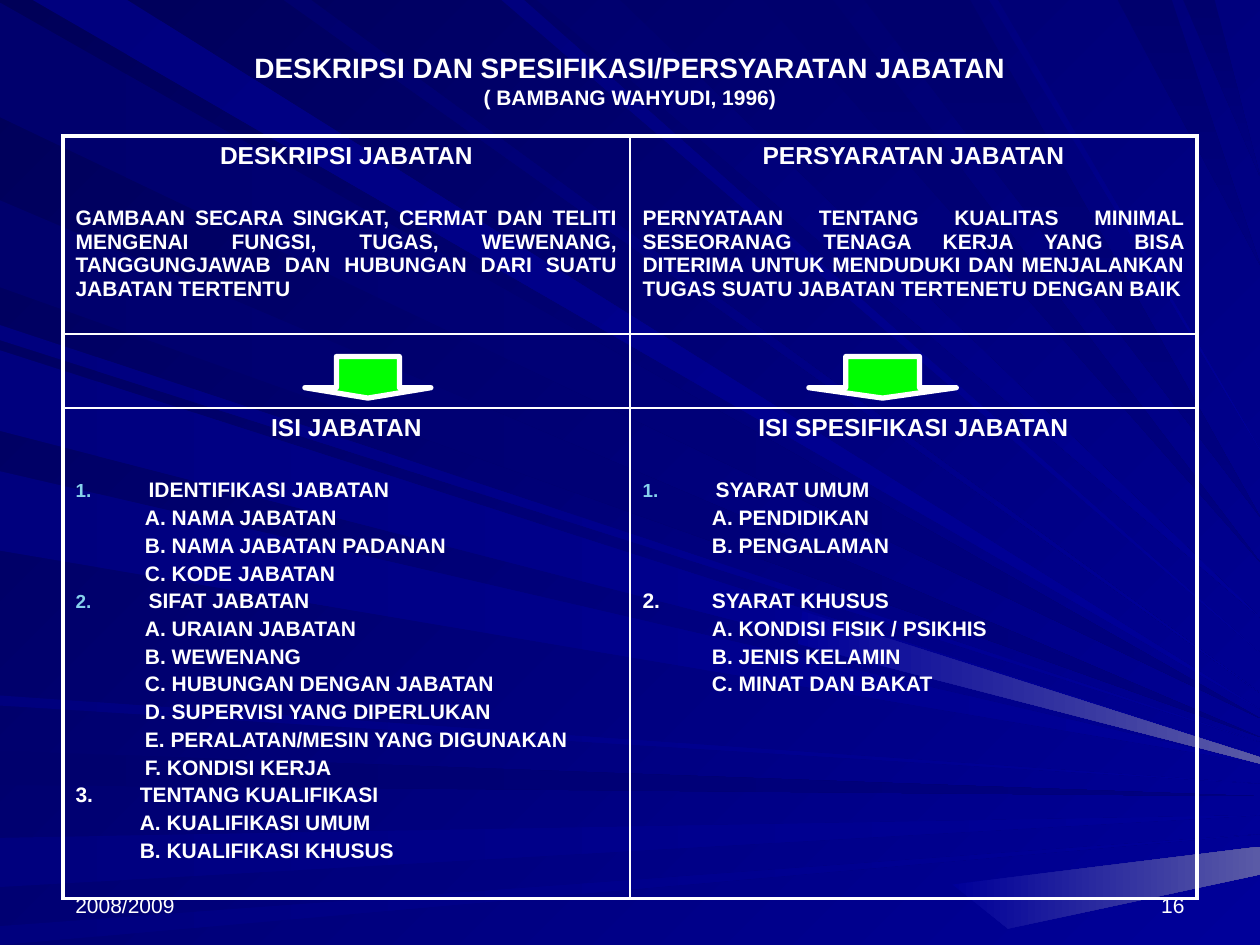
from lxml.etree import SubElement
from pptx import Presentation
from pptx.dml.color import RGBColor
from pptx.enum.shapes import MSO_SHAPE
from pptx.enum.text import MSO_ANCHOR, PP_ALIGN
from pptx.oxml import parse_xml
from pptx.oxml.ns import nsdecls, qn
from pptx.util import Inches, Pt

THEME = {
    "font": "Arial", "text": "FFFFFF", "number": "86D1EC", "arrow": "00FF00",
    "night": "000058", "deep": "00006D", "dusk": "00007E", "navy": "000080",
    "blue": "000099", "pale": "5A5AA6",
    "title": 16, "heading": 14, "body": 12,
    "outer_line": 2.25, "inner_line": 1, "arrow_line": 3,
    "space": 2.4, "heading_gap": 21, "item_gap": 18.2,
}

TITLE = "DESKRIPSI DAN SPESIFIKASI/PERSYARATAN JABATAN"
SOURCE = "( BAMBANG WAHYUDI, 1996)"
YEAR, PAGE = "2008/2009", "16"

DEFINITIONS = [
    ("DESKRIPSI JABATAN",
     "GAMBAAN SECARA SINGKAT, CERMAT DAN TELITI MENGENAI FUNGSI, TUGAS, WEWENANG, "
     "TANGGUNGJAWAB DAN HUBUNGAN DARI SUATU JABATAN TERTENTU"),
    ("PERSYARATAN JABATAN",
     "PERNYATAAN TENTANG KUALITAS MINIMAL SESEORANAG TENAGA KERJA YANG BISA DITERIMA "
     "UNTUK MENDUDUKI DAN MENJALANKAN TUGAS SUATU JABATAN TERTENETU DENGAN BAIK"),
]

CONTENTS = [
    ("ISI JABATAN", [
        (1, True, "IDENTIFIKASI JABATAN", 0.55, "heading_gap",
         ["A. NAMA JABATAN", "B. NAMA JABATAN PADANAN", "C. KODE JABATAN"]),
        (2, True, "SIFAT JABATAN", 0.55, "space",
         ["A. URAIAN JABATAN", "B. WEWENANG", "C. HUBUNGAN DENGAN JABATAN",
          "D. SUPERVISI YANG DIPERLUKAN", "E. PERALATAN/MESIN YANG DIGUNAKAN",
          "F. KONDISI KERJA"]),
        (3, False, "TENTANG KUALIFIKASI", 0.51, "space",
         ["A. KUALIFIKASI UMUM", "B. KUALIFIKASI KHUSUS"]),
    ]),
    ("ISI SPESIFIKASI JABATAN", [
        (1, True, "SYARAT UMUM", 0.55, "heading_gap",
         ["A. PENDIDIKAN", "B. PENGALAMAN"]),
        (2, False, "SYARAT KHUSUS", 0.55, "item_gap",
         ["A. KONDISI FISIK / PSIKHIS", "B. JENIS KELAMIN", "C. MINAT DAN BAKAT"]),
    ]),
]

ARROWS = [(2.42, 1), (6.42, 1.17)]
COLUMNS, ROWS = (4.5, 4.5), (1.57, 0.59, 3.89)

RAYS = [
    ("left", "deep", "navy", 0.02, 0.93, 5.7),
    ("top", "dusk", "blue", 0.26, 1.01, 5.63),
    ("left", "deep", "navy", 5.96, 6.23, 6.32),
    ("left", "dusk", "blue", 6.65, 7.04, 6.47),
    ("left", "dusk", "blue", 7.35, 7.5, 6.62),
    ("left", "dusk", "blue", 2.58, 2.7, 5.89),
    ("left", "deep", "navy", 1.59, 2.28, 5.85),
    ("top", "dusk", "blue", 3.98, 4.16, 5.18),
    ("top", "deep", "blue", 4.26, 4.92, 4.9),
    ("top", "deep", "navy", 6.06, 6.61, 4.46),
    ("top", "deep", "navy", 8.87, 9.3, 2.1),
    ("top", "deep", "navy", 9.39, 9.64, 1.4),
    ("left", "dusk", "blue", 2.78, 3.42, 6),
    ("left", "dusk", "blue", 3.74, 4.37, 6.06),
    ("left", "dusk", "blue", 5.52, 5.6, 6.22),
    ("top", "deep", "blue", 2.25, 2.47, 5.5),
    ("top", "deep", "navy", 6.86, 7.7, 4.1),
    ("top", "dusk", "blue", 7.85, 7.92, 3.57),
]
GLOWS = [
    [(7.56, 7.02), (10, 6.72), (10, 6.94), (8, 7.37)],
    [(6.37, 4.85), (10, 6.01), (10, 6.06), (6.33, 5.11)],
]


def color(name):
    return RGBColor.from_string(THEME[name])


def paint(fill, start, end, angle):
    fill.gradient()
    fill.gradient_angle = (360 - angle) % 360
    for stop, shade in zip(fill.gradient_stops, (start, end)):
        stop.color.rgb = color(shade)


def add_ray(slide, corners, start, end, angle):
    first, *rest = [(Inches(x), Inches(y)) for x, y in corners]
    builder = slide.shapes.build_freeform(*first, scale=1.0)
    builder.add_line_segments(rest, close=True)
    ray = builder.convert_to_shape()
    ray.shadow.inherit = False
    ray.line.fill.background()
    paint(ray.fill, start, end, angle)


def add_backdrop(slide):
    paint(slide.background.fill, "night", "blue", 45)
    for edge, start, end, near, far, tip in RAYS:
        if edge == "left":
            base, angle = [(0, near), (0, far)], 0
        else:
            base, angle = [(near, 0), (far, 0)], 90 if end == "navy" else 45
        add_ray(slide, base + [(10, tip)], start, end, angle)
    for corners in GLOWS:
        add_ray(slide, corners, "blue", "pale", 0)


def style(paragraph, size, align, bold=True, before=0):
    font = paragraph.font
    font.name, font.size, font.bold = THEME["font"], Pt(THEME[size]), bold
    font.color.rgb = color("text")
    paragraph.alignment, paragraph.space_before = align, Pt(before)


def add_label(slide, box, text, align, anchor, size="body", bold=False):
    frame = slide.shapes.add_textbox(*map(Inches, box)).text_frame
    frame.word_wrap, frame.vertical_anchor = True, anchor
    paragraph = frame.paragraphs[0]
    paragraph.add_run().text = text
    style(paragraph, size, align, bold)
    return paragraph


def write_heading(cell, text):
    paragraph = cell.text_frame.paragraphs[0]
    paragraph.text = text
    style(paragraph, "heading", PP_ALIGN.CENTER, before=2.8)


def write_line(cell, text, gap="space", left=0, hanging=0):
    paragraph = cell.text_frame.add_paragraph()
    paragraph.text = text
    style(paragraph, "body", PP_ALIGN.JUSTIFY, before=THEME[gap])
    properties = paragraph._p.get_or_add_pPr()
    properties.set("marL", str(Inches(left)))
    properties.set("indent", str(-Inches(hanging)))
    return properties


def add_number(properties, number):
    tint = f'<a:buClr {nsdecls("a")}><a:srgbClr val="{THEME["number"]}"/></a:buClr>'
    size = f'<a:buSzPct {nsdecls("a")} val="90000"/>'
    count = f'<a:buAutoNum {nsdecls("a")} type="arabicPeriod" startAt="{number}"/>'
    place = properties.index(properties.find(qn("a:spcBef"))) + 1
    for offset, bullet in enumerate((tint, size, count)):
        properties.insert(place + offset, parse_xml(bullet))


def write_items(cell, items):
    for number, automatic, text, indent, gap, details in items:
        if automatic:
            add_number(write_line(cell, text, gap, 0.58, 0.58), number)
        else:
            write_line(cell, f"{number}.\t{text}", gap, indent, indent)
        for detail in details:
            write_line(cell, detail, left=indent)


def draw_borders(cell, row, column):
    outer = {"lnL": column == 0, "lnR": column == len(COLUMNS) - 1,
             "lnT": row == 0, "lnB": row == len(ROWS) - 1}
    properties = cell._tc.get_or_add_tcPr()
    for place, (side, is_outer) in enumerate(outer.items()):
        width = Pt(THEME["outer_line" if is_outer else "inner_line"])
        border = SubElement(properties, qn(f"a:{side}"), w=str(width))
        SubElement(SubElement(border, qn("a:solidFill")), qn("a:srgbClr"), val=THEME["text"])
        properties.insert(place, border)


def add_job_table(slide):
    frame = slide.shapes.add_table(len(ROWS), len(COLUMNS), Inches(0.5), Inches(1.08),
                                   Inches(sum(COLUMNS)), Inches(sum(ROWS)))
    table = frame.table
    table.first_row = table.horz_banding = False
    for row, height in enumerate(ROWS):
        table.rows[row].height = Inches(height)
        for column, width in enumerate(COLUMNS):
            table.columns[column].width = Inches(width)
            table.cell(row, column).fill.background()
            draw_borders(table.cell(row, column), row, column)
    for column, (heading, definition) in enumerate(DEFINITIONS):
        write_heading(table.cell(0, column), heading)
        write_line(table.cell(0, column), definition, "heading_gap")
    for column, (heading, items) in enumerate(CONTENTS):
        write_heading(table.cell(2, column), heading)
        write_items(table.cell(2, column), items)


def main():
    """Build the slide on job descriptions and job requirements."""
    deck = Presentation()
    deck.slide_width, deck.slide_height = Inches(10), Inches(7.5)
    slide = deck.slides.add_slide(deck.slide_layouts[6])
    add_backdrop(slide)
    for left, text, align in ((0.5, YEAR, PP_ALIGN.LEFT), (7.17, PAGE, PP_ALIGN.RIGHT)):
        add_label(slide, (left, 6.83, 2.33, 0.5), text, align, MSO_ANCHOR.BOTTOM)
    title = add_label(slide, (0.5, 0.3, 9, 0.67), TITLE, PP_ALIGN.CENTER,
                      MSO_ANCHOR.MIDDLE, "title", True)
    title.add_line_break()
    source = title.add_run()
    source.text, source.font.size = SOURCE, Pt(THEME["body"])
    add_job_table(slide)
    for left, width in ARROWS:
        arrow = slide.shapes.add_shape(MSO_SHAPE.DOWN_ARROW, Inches(left), Inches(2.83),
                                       Inches(width), Inches(0.33))
        arrow.adjustments[0], arrow.adjustments[1] = 0.5, 0.25
        arrow.shadow.inherit = False
        arrow.fill.solid()
        arrow.fill.fore_color.rgb = color("arrow")
        arrow.line.color.rgb, arrow.line.width = color("text"), Pt(THEME["arrow_line"])
    deck.save("out.pptx")


if __name__ == "__main__":
    main()
